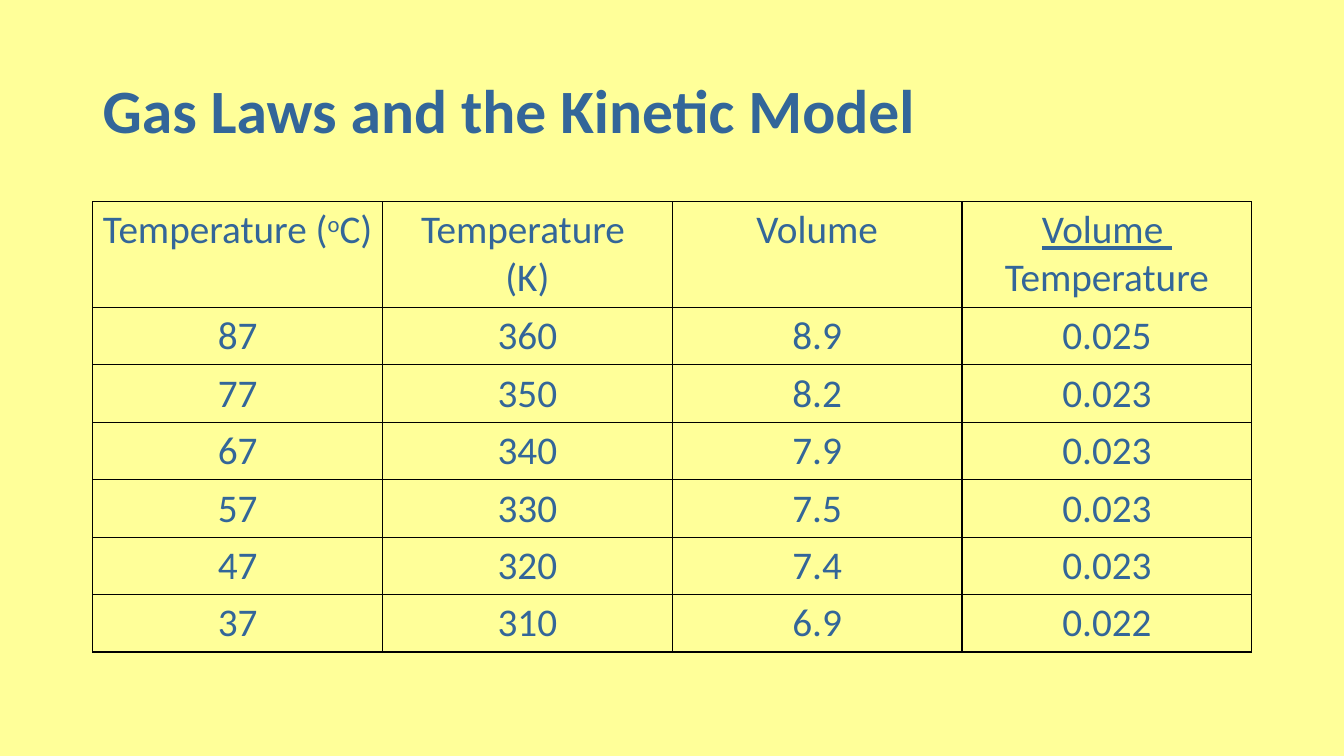
"""Build the gas laws slide: a title above a table of temperatures and volumes."""
from dataclasses import dataclass

from lxml import etree
from pptx import Presentation
from pptx import util as u
from pptx.dml.color import RGBColor
from pptx.enum import text
from pptx.oxml.ns import qn

SLIDE_WIDTH, SLIDE_HEIGHT = u.Inches(13.33), u.Inches(7.5)
BACKGROUND, INK, BORDER = "FFFF99", "336699", "000000"
FONT = "Calibri"
MARGIN_SHARE, CONTENT_SHARE = 0.069, 0.8625
TITLE_TOP_SHARE, TITLE_HEIGHT_SHARE = 0.0533, 0.1933
TABLE_TOP_SHARE = 0.2667
HEADER_HEIGHT, ROW_HEIGHT = u.Inches(1.05), u.Inches(0.57)


@dataclass(frozen=True)
class Run:
    """A piece of text with its own formatting."""
    words: str
    size: int = 28
    bold: bool = False
    underline: bool = False
    baseline: int = 0


@dataclass(frozen=True)
class Reading:
    """One measurement of the gas."""
    celsius: int
    volume: float

    @property
    def kelvin(self) -> int:
        """Return the absolute temperature."""
        return self.celsius + 273

    def labels(self) -> list[str]:
        """Return the texts of the table row."""
        ratio = self.volume / self.kelvin
        return [str(self.celsius), str(self.kelvin), f"{self.volume:.1f}", f"{ratio:.3f}"]


HEADERS = [
    [[Run("Temperature ("), Run("o", baseline=30), Run("C)")]],
    [[Run("Temperature ")], [Run("(K)")]],
    [[Run("Volume")]],
    [[Run("Volume ", underline=True), Run(" Temperature")]],
]
READINGS = [Reading(87, 8.9), Reading(77, 8.2), Reading(67, 7.9),
            Reading(57, 7.5), Reading(47, 7.4), Reading(37, 6.9)]


def color(value: str) -> RGBColor:
    """Turn a hex string into a colour."""
    return RGBColor.from_string(value)


def write(frame, paragraphs: list[list[Run]], alignment, spacing: float = 1.0) -> None:
    """Fill a text frame run by run."""
    for index, runs in enumerate(paragraphs):
        paragraph = frame.add_paragraph() if index else frame.paragraphs[0]
        paragraph.alignment = alignment
        paragraph.line_spacing = spacing
        for item in runs:
            run = paragraph.add_run()
            run.text = item.words
            font = run.font
            font.name, font.size = FONT, u.Pt(item.size)
            font.bold, font.underline = item.bold, item.underline
            font.color.rgb = color(INK)
            if item.baseline:
                font._element.set("baseline", str(item.baseline * 1000))


def style_cell(cell) -> None:
    """Give a cell thin borders and no fill."""
    properties = cell._tc.get_or_add_tcPr()
    for side in ("lnL", "lnR", "lnT", "lnB"):
        line = etree.SubElement(properties, qn(f"a:{side}"), w=str(u.Pt(1)))
        fill = etree.SubElement(line, qn("a:solidFill"))
        etree.SubElement(fill, qn("a:srgbClr"), val=BORDER)
    cell.fill.background()


def add_title(slide, words: str) -> None:
    """Place the slide's title."""
    box = slide.shapes.add_textbox(
        int(SLIDE_WIDTH * MARGIN_SHARE), int(SLIDE_HEIGHT * TITLE_TOP_SHARE),
        int(SLIDE_WIDTH * CONTENT_SHARE), int(SLIDE_HEIGHT * TITLE_HEIGHT_SHARE))
    frame = box.text_frame
    frame.word_wrap = True
    frame.vertical_anchor = text.MSO_ANCHOR.MIDDLE
    write(frame, [[Run(words, size=44, bold=True)]], text.PP_ALIGN.LEFT, 0.9)


def add_readings(slide) -> None:
    """Place the table of readings."""
    rows = HEADERS, *([[[Run(label)]] for label in reading.labels()] for reading in READINGS)
    table = slide.shapes.add_table(
        len(rows), len(HEADERS),
        int(SLIDE_WIDTH * MARGIN_SHARE), int(SLIDE_HEIGHT * TABLE_TOP_SHARE),
        int(SLIDE_WIDTH * CONTENT_SHARE), HEADER_HEIGHT + ROW_HEIGHT * len(READINGS)).table
    table.first_row = table.horz_banding = False
    for row_index, row in enumerate(rows):
        table.rows[row_index].height = ROW_HEIGHT if row_index else HEADER_HEIGHT
        for column_index, paragraphs in enumerate(row):
            cell = table.cell(row_index, column_index)
            style_cell(cell)
            write(cell.text_frame, paragraphs, text.PP_ALIGN.CENTER)


def main() -> None:
    """Build and save the presentation."""
    presentation = Presentation()
    presentation.slide_width, presentation.slide_height = SLIDE_WIDTH, SLIDE_HEIGHT
    slide = presentation.slides.add_slide(presentation.slide_layouts[6])
    slide.background.fill.solid()
    slide.background.fill.fore_color.rgb = color(BACKGROUND)
    add_title(slide, "Gas Laws and the Kinetic Model")
    add_readings(slide)
    presentation.save("out.pptx")


if __name__ == "__main__":
    main()
